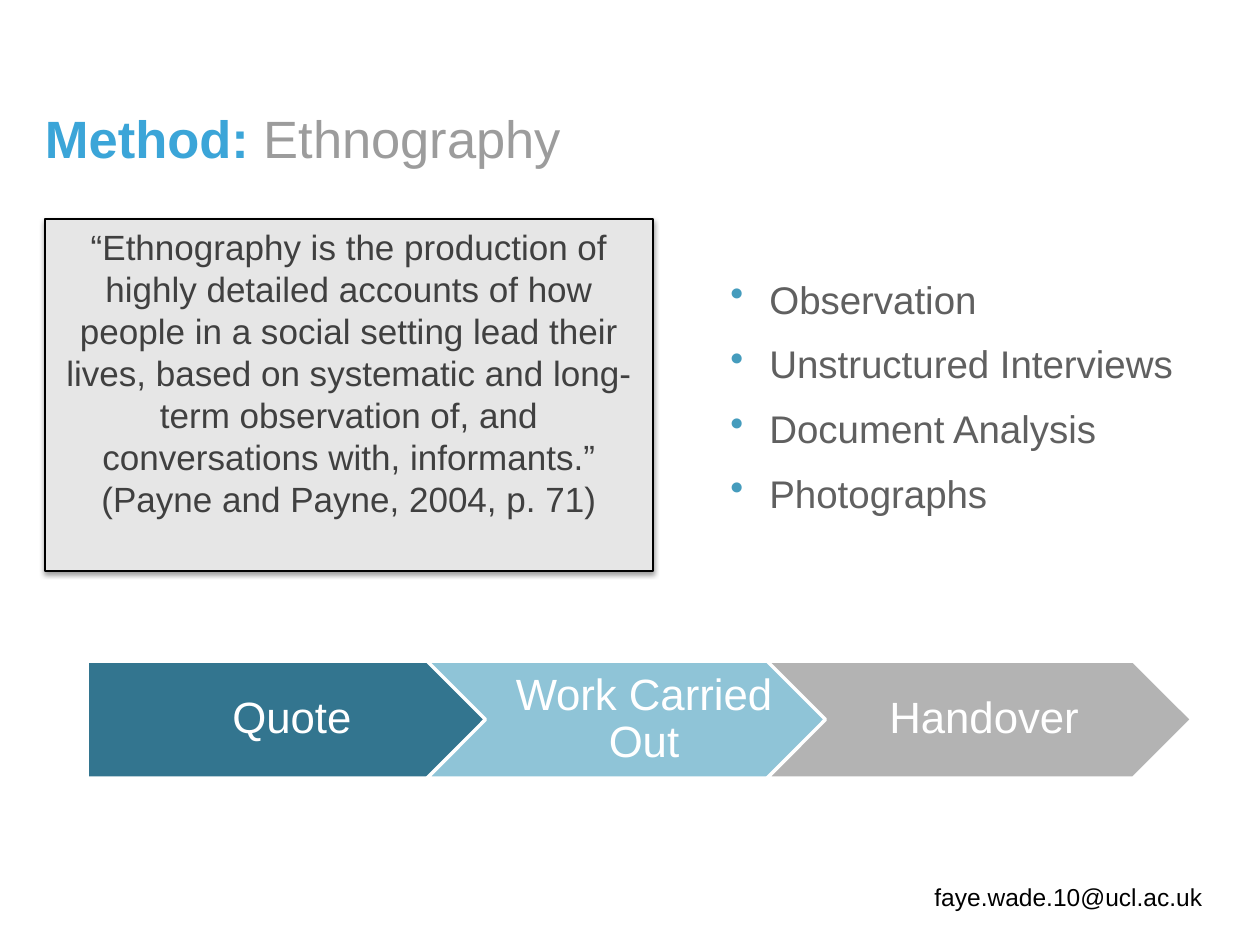
from lxml.etree import SubElement
from pptx import Presentation
from pptx.dml.color import RGBColor
from pptx.enum.shapes import MSO_SHAPE as Shape
from pptx.enum.text import MSO_ANCHOR as Anchor, MSO_AUTO_SIZE as AutoSize, PP_ALIGN as Align
from pptx.oxml.ns import qn
from pptx.util import Emu, Pt

COLORS = {
    "accent": "3BA5D8", "topic": "9C9C9C", "black": "000000", "white": "FFFFFF",
    "quote_fill": "E6E6E6", "quote_text": "404040", "bullet": "459CBD", "method": "606060",
    "step1": "33758F", "step2": "8FC4D7", "step3": "B3B3B3",
}
FONT = "Arial"
METHODS = ["Observation", "Unstructured Interviews", "Document Analysis", "Photographs"]
STEPS = [("Quote", "step1"), ("Work Carried Out", "step2"), ("Handover", "step3")]
STEP_LEFT, STEP_PITCH = 87, 340


def px(length):
    return Emu(round(length * 914400 / 126))


def rgb(name):
    return RGBColor.from_string(COLORS[name])


class SlideBuilder:
    def __init__(self, slide):
        self.slide = slide

    def style(self, font, size, color, bold=False):
        font.name, font.size, font.bold = FONT, Pt(size), bold
        font.color.rgb = rgb(color)

    def set_insets(self, frame, left, top, right, bottom):
        frame.margin_left, frame.margin_top = px(left), px(top)
        frame.margin_right, frame.margin_bottom = px(right), px(bottom)

    def title(self, box, parts, size):
        """Fill the title with (text, color, bold) parts."""
        heading = self.slide.shapes.title
        heading.left, heading.top, heading.width, heading.height = map(px, box)
        frame = heading.text_frame
        frame.auto_size, frame.vertical_anchor = AutoSize.NONE, Anchor.TOP
        self.set_insets(frame, 0, 0, 0, 0)
        line = frame.paragraphs[0]
        line.alignment = Align.LEFT
        for text, color, bold in parts:
            run = line.add_run()
            run.text = text
            self.style(run.font, size, color, bold)

    def text(self, box, lines, size, color):
        frame = self.slide.shapes.add_textbox(*map(px, box)).text_frame
        frame.word_wrap = True
        frame.text = "\n".join(lines)
        for paragraph in frame.paragraphs:
            self.style(paragraph.font, size, color)
        return frame

    def bullets(self, box, lines, size, color, spacing, indent):
        frame = self.text(box, lines, size, color)
        for paragraph in frame.paragraphs:
            paragraph.line_spacing = spacing
            props = paragraph._p.get_or_add_pPr()
            props.set("marL", str(px(indent)))
            props.set("indent", str(-px(indent)))
            bullet_color = props.makeelement(qn("a:buClr"))
            SubElement(bullet_color, qn("a:srgbClr"), val=COLORS["bullet"])
            bullet_char = props.makeelement(qn("a:buChar"), char="•")
            props.find(qn("a:defRPr")).addprevious(bullet_color)
            bullet_color.addnext(bullet_char)

    def shape(self, kind, box, text, size, fill, line, line_width, color):
        shape = self.slide.shapes.add_shape(kind, *map(px, box))
        shape.shadow.inherit = False
        shape.fill.solid()
        shape.fill.fore_color.rgb = rgb(fill)
        shape.line.color.rgb = rgb(line)
        shape.line.width = Pt(line_width)
        frame = shape.text_frame
        frame.word_wrap = True
        frame.text = text
        paragraph = frame.paragraphs[0]
        paragraph.alignment = Align.CENTER
        self.style(paragraph.runs[0].font, size, color)
        return shape

    def quote(self, box, text):
        panel = self.shape(Shape.RECTANGLE, box, text, 20, "quote_fill", "black", 0.75, "quote_text")
        panel.text_frame.vertical_anchor = Anchor.TOP
        effects = panel._element.spPr.find(qn("a:effectLst"))
        shadow = SubElement(effects, qn("a:outerShdw"), blurRad=str(Pt(3.1)), dist=str(Pt(1.6)),
                            dir="5400000", rotWithShape="0")
        shade = SubElement(shadow, qn("a:srgbClr"), val=COLORS["black"])
        SubElement(shade, qn("a:alpha"), val="38000")

    def step(self, kind, box, text, fill, left_inset):
        arrow = self.shape(kind, box, text, 25, fill, "white", 2, "white")
        frame = arrow.text_frame
        frame.vertical_anchor = Anchor.MIDDLE
        self.set_insets(frame, left_inset, 9, 5, 9)
        frame.paragraphs[0].line_spacing = 0.9


def main():
    deck = Presentation()
    deck.slide_width, deck.slide_height = px(1260), px(945)
    page = SlideBuilder(deck.slides.add_slide(deck.slide_layouts[5]))

    page.title((45, 106, 595, 78), [("Method: ", "accent", True), ("Ethnography", "topic", False)], 30)
    page.text((922, 876, 299, 50), ["faye.wade.10@ucl.ac.uk"], 14, "black")

    for index, (label, fill) in enumerate(STEPS):
        kind, left_inset = (Shape.CHEVRON, 14) if index else (Shape.PENTAGON, 19)
        page.step(kind, (STEP_LEFT + index * STEP_PITCH, 661, 425, 117), label, fill, left_inset)

    page.bullets((718, 251, 475, 271), METHODS, 22, "method", spacing=1.4, indent=39)
    page.quote((45, 219, 608, 352),
               "“Ethnography is the production of highly detailed accounts of how people in a social "
               "setting lead their lives, based on systematic and long-term observation of, and "
               "conversations with, informants.” (Payne and Payne, 2004, p. 71)")
    deck.save("out.pptx")


if __name__ == "__main__":
    main()
